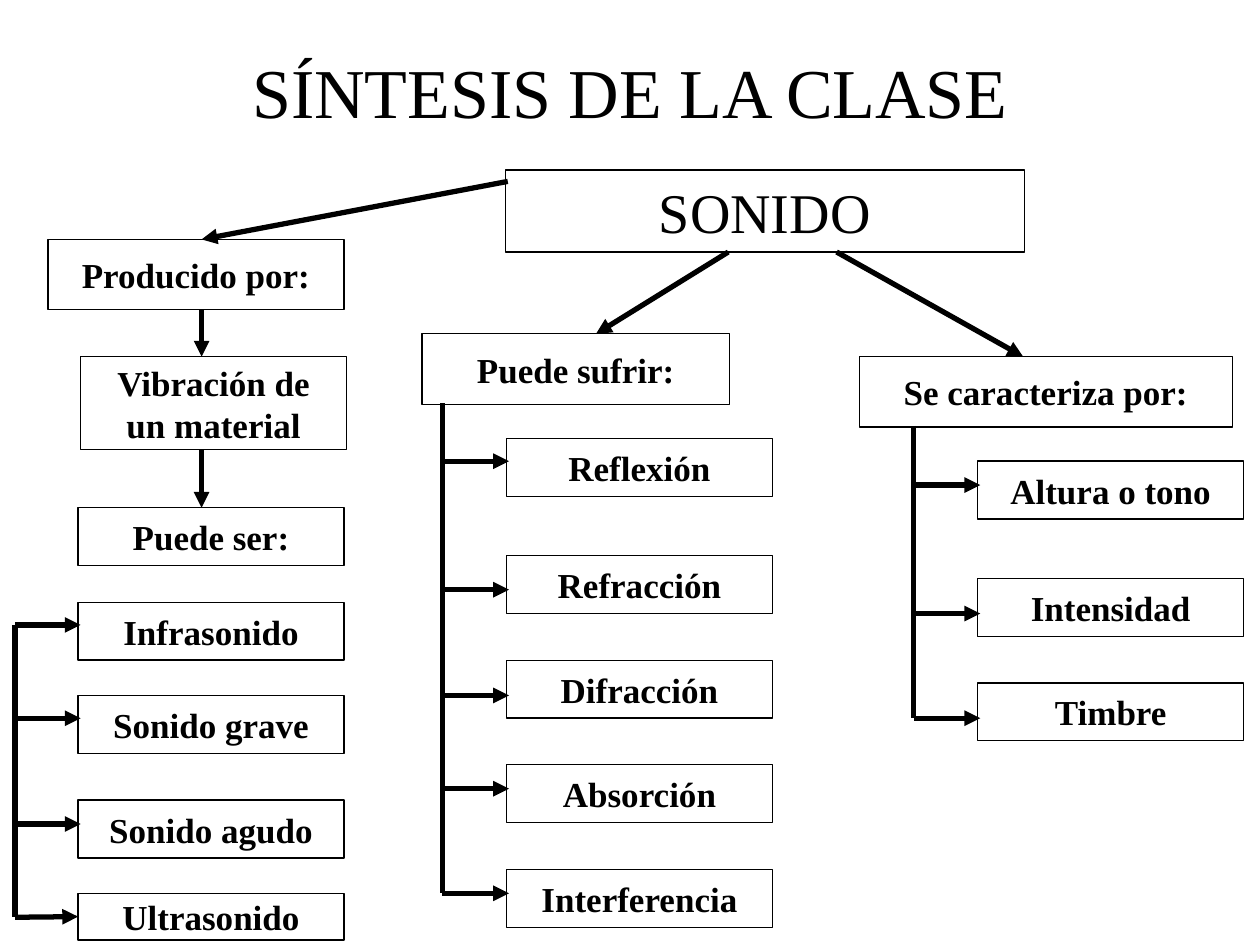
from lxml import etree
from pptx import Presentation
from pptx import util as u
from pptx.dml.color import RGBColor
from pptx.enum import shapes, text
from pptx.oxml.ns import qn

INK = "000000"
FONT = "Times New Roman"
ITEM_W, ITEM_H = 2.11, 0.46
HEAD_H = 0.56
JOIN_TOLERANCE = 0.02

# Each branch: trunk x, trunk top, item left, [(label, top, height, arrow y)]
BRANCHES = [
    (0.12, 4.96, 0.62, [
        ("Infrasonido", 4.78, ITEM_H, 4.96),
        ("Sonido grave", 5.52, ITEM_H, 5.7),
        ("Sonido agudo", 6.35, ITEM_H, 6.54),
        ("Ultrasonido", 7.09, 0.37, 7.28)]),
    (3.51, 3.2, 4.02, [
        ("Reflexión", 3.48, ITEM_H, 3.66),
        ("Refracción", 4.41, ITEM_H, 4.68),
        ("Difracción", 5.24, ITEM_H, 5.52),
        ("Absorción", 6.07, ITEM_H, 6.26),
        ("Interferencia", 6.9, ITEM_H, 7.09)]),
    (7.25, 3.38, 7.76, [
        ("Altura o tono", 3.66, ITEM_H, 3.85),
        ("Intensidad", 4.59, ITEM_H, 4.87),
        ("Timbre", 5.42, ITEM_H, 5.7)]),
]


def color(hex_code):
    return RGBColor.from_string(hex_code)


def write(frame, label, size, bold):
    frame.text = label
    for paragraph in frame.paragraphs:
        paragraph.alignment = text.PP_ALIGN.CENTER
        paragraph.font.name = FONT
        paragraph.font.size = u.Pt(size)
        paragraph.font.bold = bold
        paragraph.font.color.rgb = color(INK)


def add_title(slide, label):
    title = slide.shapes.add_textbox(0, u.Inches(0.09), u.Inches(10), u.Inches(1.01))
    title.text_frame.word_wrap = True
    title.text_frame.vertical_anchor = text.MSO_ANCHOR.BOTTOM
    write(title.text_frame, label, 40, False)


def add_box(slide, label, left, top, width=ITEM_W, height=ITEM_H, size=20, bold=True):
    box = slide.shapes.add_shape(
        shapes.MSO_SHAPE.RECTANGLE, *map(u.Inches, (left, top, width, height)))
    box.shadow.inherit = False
    box.fill.background()
    box.line.color.rgb = color(INK)
    box.line.width = u.Pt(0.75)
    box.text_frame.word_wrap = False
    box.text_frame.vertical_anchor = text.MSO_ANCHOR.MIDDLE
    write(box.text_frame, label, size, bold)
    return box


def add_line(slide, start, end, arrow=True):
    line = slide.shapes.add_connector(
        shapes.MSO_CONNECTOR.STRAIGHT, *map(u.Inches, (*start, *end)))
    line.line.color.rgb = color(INK)
    line.line.width = u.Pt(3)
    if arrow:
        etree.SubElement(line.line._get_or_add_ln(), qn("a:tailEnd"), type="triangle")
    etree.SubElement(line._element.spPr, qn("a:effectLst"))
    return line


def add_branch(slide, trunk_x, trunk_top, left, items):
    trunk_bottom = items[-1][-1]
    add_line(slide, (trunk_x, trunk_top), (trunk_x, trunk_bottom), arrow=False)
    for label, top, height, arrow_y in items:
        item = add_box(slide, label, left, top, height=height)
        arrow = add_line(slide, (trunk_x, arrow_y), (left + 0.02, arrow_y))
        if abs(top + height / 2 - arrow_y) < JOIN_TOLERANCE:
            arrow.end_connect(item, 1)


def main():
    deck = Presentation()
    deck.slide_width, deck.slide_height = u.Inches(10), u.Inches(7.5)
    slide = deck.slides.add_slide(deck.slide_layouts[6])

    # Title and main concept
    add_title(slide, "SÍNTESIS DE LA CLASE")
    add_box(slide, "SONIDO", 4.01, 1.35, 4.12, 0.65, size=32, bold=False)

    # Branch heads
    add_box(slide, "Producido por:", 0.38, 1.9, 2.35, HEAD_H)
    add_box(slide, "Puede sufrir:", 3.35, 2.65, 2.44, HEAD_H)
    add_box(slide, "Se caracteriza por:", 6.82, 2.83, 2.96, HEAD_H)

    # Arrows from the main concept to the heads
    add_line(slide, (4.03, 1.44), (1.6, 1.9))
    add_line(slide, (5.78, 2), (4.73, 2.65))
    add_line(slide, (6.64, 2), (8.12, 2.83))

    # Chain of causes on the left
    add_box(slide, "Vibración de\nun material", 0.64, 2.83, height=0.74)
    add_box(slide, "Puede ser:", 0.62, 4.03)
    for top, bottom in ((2.46, 2.83), (3.57, 4.03)):
        add_line(slide, (1.6, top), (1.6, bottom))

    # Lists hanging from their trunks
    for branch in BRANCHES:
        add_branch(slide, *branch)

    deck.save("out.pptx")


if __name__ == "__main__":
    main()
